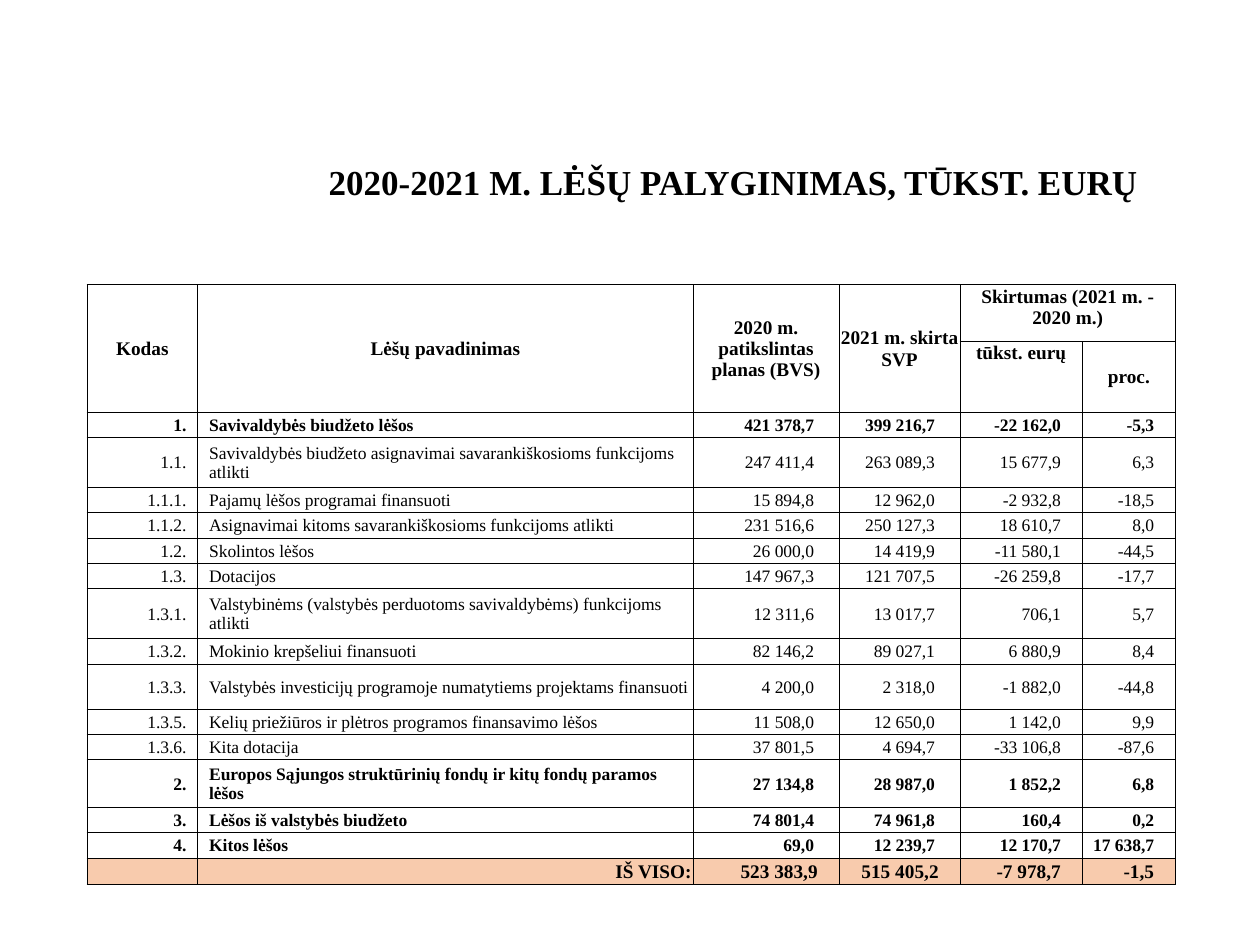
from typing import NamedTuple

import lxml.etree
import pptx
import pptx.dml.color
import pptx.enum.text
import pptx.oxml.ns
import pptx.util

Inches = pptx.util.Inches
Pt = pptx.util.Pt
Align = pptx.enum.text.PP_ALIGN
Anchor = pptx.enum.text.MSO_ANCHOR
qn = pptx.oxml.ns.qn

FONT = "Times New Roman"
BLACK = "000000"
TOTAL_FILL = "F8CBAD"
COLUMN_WIDTHS = [0.88, 3.93, 1.16, 0.96, 0.97, 0.74]
HEADER_HEIGHTS = [0.45, 0.51]


class CellStyle(NamedTuple):
    align: Align
    left: float = 0.01
    right: float = 0.01
    anchor: Anchor = Anchor.MIDDLE


class Heading(NamedTuple):
    text: str
    row: int
    column: int
    last_row: int
    last_column: int
    anchor: Anchor = Anchor.MIDDLE


class FundRow(NamedTuple):
    code: str
    name: str
    plan: str
    allotted: str
    change: str
    percent: str
    height: float = 0.2
    bold: bool = False


HEADINGS = [
    Heading("Kodas", 0, 0, 1, 0),
    Heading("Lėšų pavadinimas", 0, 1, 1, 1),
    Heading("2020 m. patikslintas planas (BVS)", 0, 2, 1, 2),
    Heading("2021 m. skirta SVP", 0, 3, 1, 3),
    Heading("Skirtumas (2021 m. - 2020 m.)", 0, 4, 0, 5, Anchor.TOP),
    Heading("tūkst. eurų", 1, 4, 1, 4, Anchor.TOP),
    Heading("proc.", 1, 5, 1, 5),
]

FUNDS = [
    FundRow("1.", "Savivaldybės biudžeto lėšos",
            "421 378,7", "399 216,7", "-22 162,0", "-5,3", bold=True),
    FundRow("1.1.", "Savivaldybės biudžeto asignavimai savarankiškosioms funkcijoms atlikti",
            "247 411,4", "263 089,3", "15 677,9", "6,3", 0.4),
    FundRow("1.1.1.", "Pajamų lėšos programai finansuoti",
            "15 894,8", "12 962,0", "-2 932,8", "-18,5"),
    FundRow("1.1.2.", "Asignavimai kitoms savarankiškosioms funkcijoms atlikti",
            "231 516,6", "250 127,3", "18 610,7", "8,0"),
    FundRow("1.2.", "Skolintos lėšos", "26 000,0", "14 419,9", "-11 580,1", "-44,5"),
    FundRow("1.3.", "Dotacijos", "147 967,3", "121 707,5", "-26 259,8", "-17,7"),
    FundRow("1.3.1.", "Valstybinėms (valstybės perduotoms savivaldybėms) funkcijoms atlikti",
            "12 311,6", "13 017,7", "706,1", "5,7", 0.4),
    FundRow("1.3.2.", "Mokinio krepšeliui finansuoti",
            "82 146,2", "89 027,1", "6 880,9", "8,4"),
    FundRow("1.3.3.", "Valstybės investicijų programoje numatytiems projektams finansuoti",
            "4 200,0", "2 318,0", "-1 882,0", "-44,8", 0.36),
    FundRow("1.3.5.", "Kelių priežiūros ir plėtros programos finansavimo lėšos",
            "11 508,0", "12 650,0", "1 142,0", "9,9"),
    FundRow("1.3.6.", "Kita dotacija", "37 801,5", "4 694,7", "-33 106,8", "-87,6"),
    FundRow("2.", "Europos Sąjungos struktūrinių fondų ir kitų fondų paramos lėšos",
            "27 134,8", "28 987,0", "1 852,2", "6,8", 0.38, True),
    FundRow("3.", "Lėšos iš valstybės biudžeto",
            "74 801,4", "74 961,8", "160,4", "0,2", bold=True),
    FundRow("4.", "Kitos lėšos", "69,0", "12 239,7", "12 170,7", "17 638,7", bold=True),
]
TOTAL = FundRow("", "IŠ VISO:", "523 383,9", "515 405,2", "-7 978,7", "-1,5", 0.21, True)

CODE = CellStyle(Align.RIGHT, right=0.09)
NAME = CellStyle(Align.LEFT, left=0.09)
AMOUNT = CellStyle(Align.RIGHT, right=0.2)
CHANGE = CellStyle(Align.RIGHT, right=0.17)
FUND_STYLES = [CODE, NAME, AMOUNT, AMOUNT, CHANGE, CHANGE]
TOTAL_STYLES = [CODE, CellStyle(Align.RIGHT)] + [CHANGE] * 4


def color(value: str) -> pptx.dml.color.RGBColor:
    return pptx.dml.color.RGBColor.from_string(value)


def add_span(para, text: str, size: float, bold: bool) -> None:
    span = para.add_run()
    span.text = text
    span.font.name = FONT
    span.font.size = Pt(size)
    span.font.bold = bold
    span.font.color.rgb = color(BLACK)


def add_borders(cell) -> None:
    properties = cell._tc.get_or_add_tcPr()
    for side in ("a:lnL", "a:lnR", "a:lnT", "a:lnB"):
        line = lxml.etree.SubElement(properties, qn(side), w=str(Pt(0.5)))
        fill = lxml.etree.SubElement(line, qn("a:solidFill"))
        lxml.etree.SubElement(fill, qn("a:srgbClr"), val=BLACK)


def write_cell(cell, text: str, style: CellStyle, size: float, bold: bool) -> None:
    cell.margin_left = Inches(style.left)
    cell.margin_right = Inches(style.right)
    cell.margin_top = Inches(0.01)
    cell.margin_bottom = 0
    cell.vertical_anchor = style.anchor
    para = cell.text_frame.paragraphs[0]
    para.alignment = style.align
    if text:
        add_span(para, text, size, bold)
    else:
        lxml.etree.SubElement(para._p, qn("a:endParaRPr"), sz=str(int(size * 100)))


def write_fund(table, row: int, fund: FundRow, styles: list[CellStyle], size: float) -> None:
    for column, (text, style) in enumerate(zip(fund[:6], styles)):
        write_cell(table.cell(row, column), text, style, size, fund.bold)


def add_title(page) -> None:
    box = page.shapes.add_textbox(Inches(2.32), Inches(1.09), Inches(7), Inches(0.75))
    box.text_frame.word_wrap = True
    box.text_frame.vertical_anchor = Anchor.MIDDLE
    para = box.text_frame.paragraphs[0]
    para.alignment = Align.CENTER
    para.line_spacing = 0.9
    add_span(para, "2020-2021 M. LĖŠŲ PALYGINIMAS, TŪKST. EURŲ", 20, True)


def add_funds_table(page) -> None:
    heights = HEADER_HEIGHTS + [fund.height for fund in FUNDS] + [TOTAL.height]
    table = page.shapes.add_table(
        len(heights), len(COLUMN_WIDTHS), Inches(0.69), Inches(2.26),
        Inches(sum(COLUMN_WIDTHS)), Inches(sum(heights))).table
    table.first_row = False
    table.horz_banding = False
    for column, width in zip(table.columns, COLUMN_WIDTHS):
        column.width = Inches(width)
    for row, height in zip(table.rows, heights):
        row.height = Inches(height)
    for cell in table.iter_cells():
        add_borders(cell)
        cell.fill.background()

    for heading in HEADINGS:
        cell = table.cell(heading.row, heading.column)
        end = (heading.last_row, heading.last_column)
        if end != (heading.row, heading.column):
            cell.merge(table.cell(*end))
        style = CellStyle(Align.CENTER, anchor=heading.anchor)
        write_cell(cell, heading.text, style, 11, True)

    for row, fund in enumerate(FUNDS, start=len(HEADER_HEIGHTS)):
        write_fund(table, row, fund, FUND_STYLES, 10)
    last = len(heights) - 1
    write_fund(table, last, TOTAL, TOTAL_STYLES, 11)
    for cell in table.rows[last].cells:
        cell.fill.solid()
        cell.fill.fore_color.rgb = color(TOTAL_FILL)


def main() -> None:
    deck = pptx.Presentation()
    deck.slide_width = Inches(10)
    deck.slide_height = Inches(7.5)
    page = deck.slides.add_slide(deck.slide_layouts[6])
    add_title(page)
    add_funds_table(page)
    deck.save("out.pptx")


if __name__ == "__main__":
    main()
